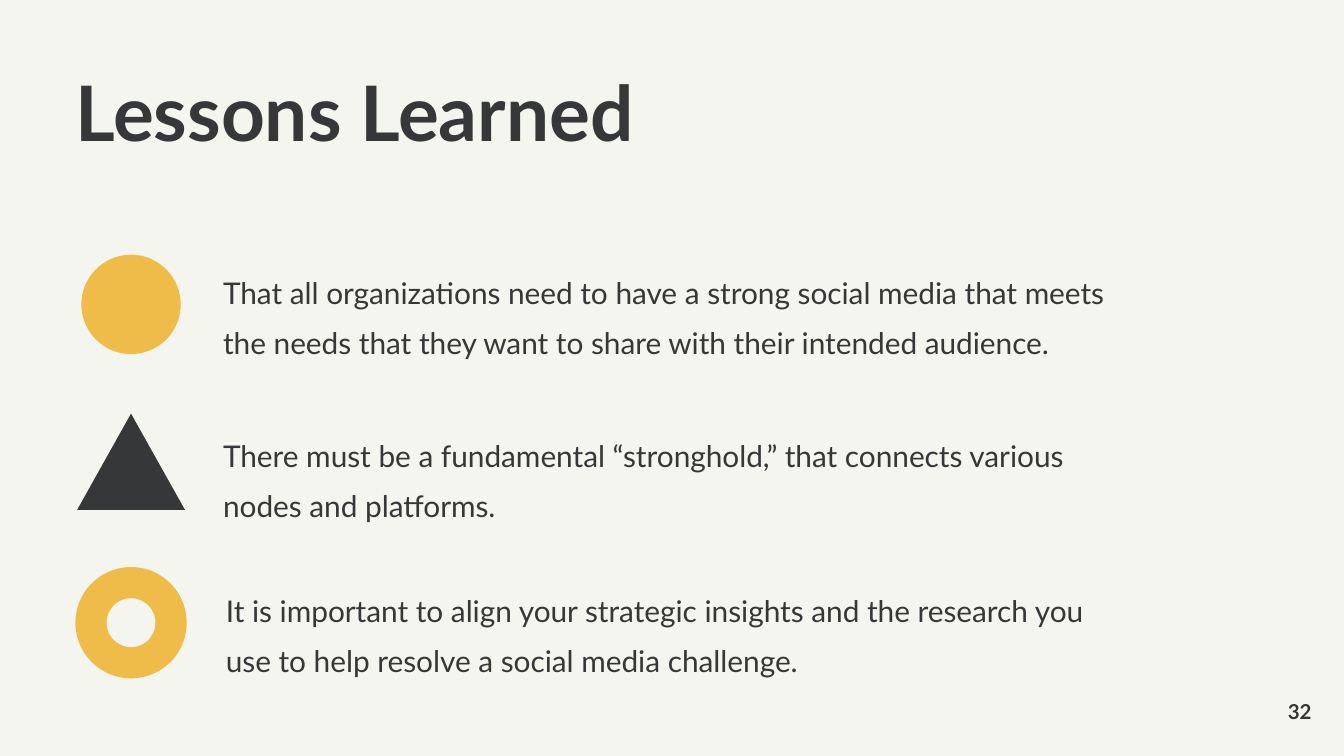
import pptx
import pptx.dml.color
import pptx.enum.shapes
import pptx.enum.text
import pptx.util

Pt = pptx.util.Pt
RGBColor = pptx.dml.color.RGBColor
MSO_SHAPE = pptx.enum.shapes.MSO_SHAPE
MSO_ANCHOR = pptx.enum.text.MSO_ANCHOR
PP_ALIGN = pptx.enum.text.PP_ALIGN

CREAM = RGBColor(0xF5, 0xF5, 0xEF)
CHARCOAL = RGBColor(0x36, 0x37, 0x39)
GOLD = RGBColor(0xEF, 0xBC, 0x49)
FONT = "Lato"

LESSONS = [
    ("That all organizations need to have a strong social media that meets "
     "the needs that they want to share with their intended audience.",
     (119.5, 139.7, 481, 46.8)),
    ("There must be a fundamental “stronghold,” that connects various "
     "nodes and platforms.",
     (119.5, 226.8, 481, 46.8)),
    ("It is important to align your strategic insights and the research you "
     "use to help resolve a social media challenge.",
     (121, 309.6, 481, 73.4)),
]

ICONS = [
    (MSO_SHAPE.OVAL, (43.6, 136.5, 53.2, 53.2), GOLD),
    (MSO_SHAPE.ISOSCELES_TRIANGLE, (41.3, 221.6, 57.8, 51.6), CHARCOAL),
    (MSO_SHAPE.DONUT, (40.4, 303.8, 59.6, 59.6), GOLD),
]


def place(shape, box):
    shape.left, shape.top, shape.width, shape.height = map(Pt, box)


def write(shape, text, size, bold=False, align=PP_ALIGN.LEFT,
          anchor=MSO_ANCHOR.TOP, spacing=1.0):
    frame = shape.text_frame
    frame.text = text
    frame.word_wrap = True
    frame.auto_size = pptx.enum.text.MSO_AUTO_SIZE.NONE
    frame.vertical_anchor = anchor
    frame.margin_left = frame.margin_right = Pt(0)
    frame.margin_top = frame.margin_bottom = Pt(0)
    paragraph = frame.paragraphs[0]
    paragraph.alignment = align
    paragraph.line_spacing = spacing
    paragraph.space_before = Pt(0)
    font = paragraph.runs[0].font
    font.name = FONT
    font.size = Pt(size)
    font.bold = bold
    font.color.rgb = CHARCOAL


def add_text(slide, text, box, size, **style):
    shape = slide.shapes.add_textbox(*map(Pt, box))
    write(shape, text, size, **style)


def add_icon(slide, kind, box, color):
    shape = slide.shapes.add_shape(kind, *map(Pt, box))
    shape.shadow.inherit = False
    shape.fill.solid()
    shape.fill.fore_color.rgb = color
    shape.line.fill.background()
    if kind == MSO_SHAPE.DONUT:
        shape.adjustments[0] = 0.28


def main():
    presentation = pptx.Presentation()
    presentation.slide_width = Pt(720)
    presentation.slide_height = Pt(405)
    slide = presentation.slides.add_slide(presentation.slide_layouts[5])
    slide.background.fill.solid()
    slide.background.fill.fore_color.rgb = CREAM

    title = slide.shapes.title
    place(title, (40.3, 40.3, 510.5, 56.9))
    write(title, "Lessons Learned", 41, bold=True, spacing=0.9)

    for kind, box, color in ICONS:
        add_icon(slide, kind, box, color)
    for text, box in LESSONS:
        add_text(slide, text, box, 16, spacing=1.4)
    add_text(slide, "32", (659.5, 373.7, 43.2, 14.4), 11, bold=True,
             align=PP_ALIGN.RIGHT, anchor=MSO_ANCHOR.MIDDLE)

    presentation.save("out.pptx")


if __name__ == "__main__":
    main()
